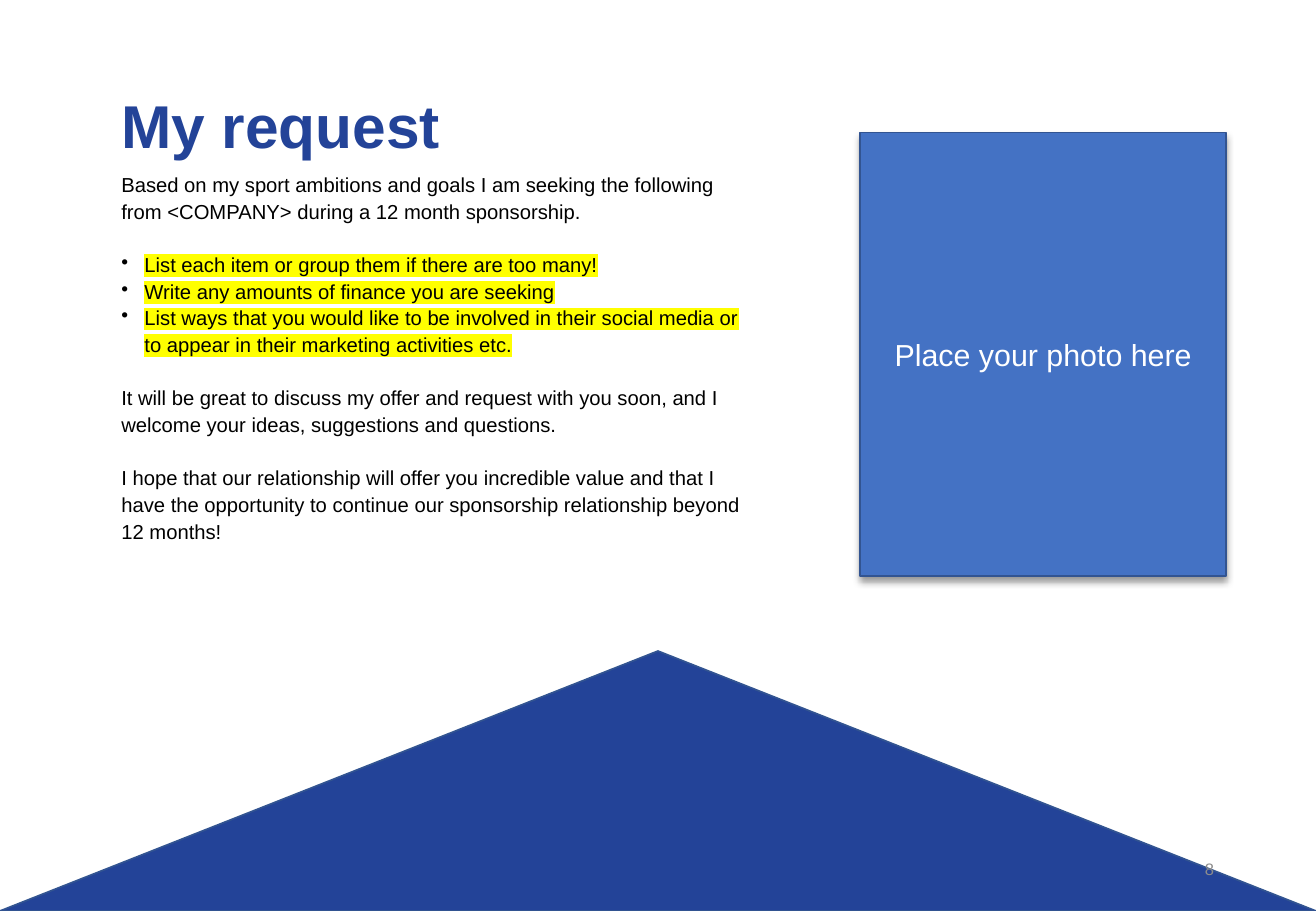
from dataclasses import dataclass

from lxml import etree
from pptx import Presentation
from pptx.dml.color import RGBColor
from pptx.enum.shapes import MSO_SHAPE
from pptx.enum.text import MSO_ANCHOR, PP_ALIGN
from pptx.oxml import parse_xml
from pptx.oxml.ns import nsdecls, qn
from pptx.util import Pt

RECT = MSO_SHAPE.RECTANGLE
PEAK = MSO_SHAPE.ISOSCELES_TRIANGLE
TOP, MIDDLE = MSO_ANCHOR.TOP, MSO_ANCHOR.MIDDLE
LEFT, CENTER, RIGHT = PP_ALIGN.LEFT, PP_ALIGN.CENTER, PP_ALIGN.RIGHT
PX = 9144  # 100 px to the inch
WIDTH, HEIGHT = 1083, 750


@dataclass(frozen=True)
class Theme:
    font: str = "Arial"
    navy: str = "234398"
    blue: str = "4472C4"
    edge: str = "325491"
    white: str = "FFFFFF"
    black: str = "000000"
    gray: str = "8C8C8C"
    mark: str = "FFFF00"
    title: float = 35.8
    photo: float = 18
    body: float = 12
    page: float = 9.8
    gap: float = 15.8


THEME = Theme()

# Text, bulleted, followed by a gap
BODY = [
    ("Based on my sport ambitions and goals I am seeking the following "
     "from <COMPANY> during a 12 month sponsorship.", False, True),
    ("List each item or group them if there are too many!", True, False),
    ("Write any amounts of finance you are seeking", True, False),
    ("List ways that you would like to be involved in their social media or "
     "to appear in their marketing activities etc.", True, True),
    ("It will be great to discuss my offer and request with you soon, and I "
     "welcome your ideas, suggestions and questions.", False, True),
    ("I hope that our relationship will offer you incredible value and that I "
     "have the opportunity to continue our sponsorship relationship beyond "
     "12 months!", False, False),
]


def scale(box):
    return [n * PX for n in box]


def add_form(slide, kind, box, fill, line=None):
    form = slide.shapes.add_shape(kind, *scale(box))
    form.shadow.inherit = False
    form.fill.solid()
    form.fill.fore_color.rgb = RGBColor.from_string(fill)
    if line:
        form.line.color.rgb = RGBColor.from_string(line)
        form.line.width = Pt(1)
    else:
        form.line.fill.background()
    return form


def set_frame(form, anchor):
    frame = form.text_frame
    frame.word_wrap = True
    frame.vertical_anchor = anchor
    return frame


def write(para, text, size, color, align=LEFT, bold=False):
    run = para.add_run()
    run.text = text
    para.alignment = align
    para.font.name = THEME.font
    para.font.size = Pt(size)
    para.font.bold = bold
    para.font.color.rgb = RGBColor.from_string(color)
    return run


def add_bullet(para, run):
    props = para._p.get_or_add_pPr()
    props.set("marL", str(19 * PX))
    props.set("indent", str(-19 * PX))
    bullet = parse_xml(f'<a:buChar {nsdecls("a")} char="•"/>')
    props.find(qn("a:defRPr")).addprevious(bullet)
    mark = etree.SubElement(run._r.get_or_add_rPr(), qn("a:highlight"))
    etree.SubElement(mark, qn("a:srgbClr"), val=THEME.mark)


def add_shadow(form):
    effects = form._element.spPr.find(qn("a:effectLst"))
    effects.append(parse_xml(
        f'<a:outerShdw {nsdecls("a")} blurRad="{Pt(4)}" dist="{Pt(3)}" '
        'dir="5400000" rotWithShape="0"><a:srgbClr val="000000">'
        '<a:alpha val="40000"/></a:srgbClr></a:outerShdw>'))


def add_footer(slide, box):
    left, top, width, height = box
    add_form(slide, PEAK, box, THEME.navy, THEME.edge)
    # Page number
    spot = (left + width - 318, top + height - 55, 244, 40)
    page = slide.shapes.add_textbox(*scale(spot))
    write(set_frame(page, MIDDLE).paragraphs[0], "8", THEME.page, THEME.gray, RIGHT)


def add_title(slide, box):
    frame = set_frame(add_form(slide, RECT, box, THEME.white), TOP)
    para = frame.paragraphs[0]
    para.line_spacing = 1.5
    para.space_before = para.space_after = Pt(6)
    write(para, "My request", THEME.title, THEME.navy, bold=True)


def add_body(slide, box):
    frame = set_frame(slide.shapes.add_textbox(*scale(box)), TOP)
    for i, (text, listed, gap) in enumerate(BODY):
        para = frame.add_paragraph() if i else frame.paragraphs[0]
        para.line_spacing = 1.1
        para.space_after = Pt(THEME.gap if gap else 0)
        run = write(para, text, THEME.body, THEME.black)
        if listed:
            add_bullet(para, run)


def add_photo(slide, box):
    form = add_form(slide, RECT, box, THEME.blue, THEME.edge)
    add_shadow(form)
    para = set_frame(form, MIDDLE).paragraphs[0]
    write(para, "Place your photo here", THEME.photo, THEME.white, CENTER)


def main():
    deck = Presentation()
    deck.slide_width, deck.slide_height = scale((WIDTH, HEIGHT))
    slide = deck.slides.add_slide(deck.slide_layouts[6])
    add_footer(slide, (0, 536, WIDTH, 214))
    add_title(slide, (90, 38, 852, 91))
    add_body(slide, (90, 135, 545, 319))
    add_photo(slide, (708, 109, 301, 365))
    deck.save("out.pptx")


if __name__ == "__main__":
    main()
